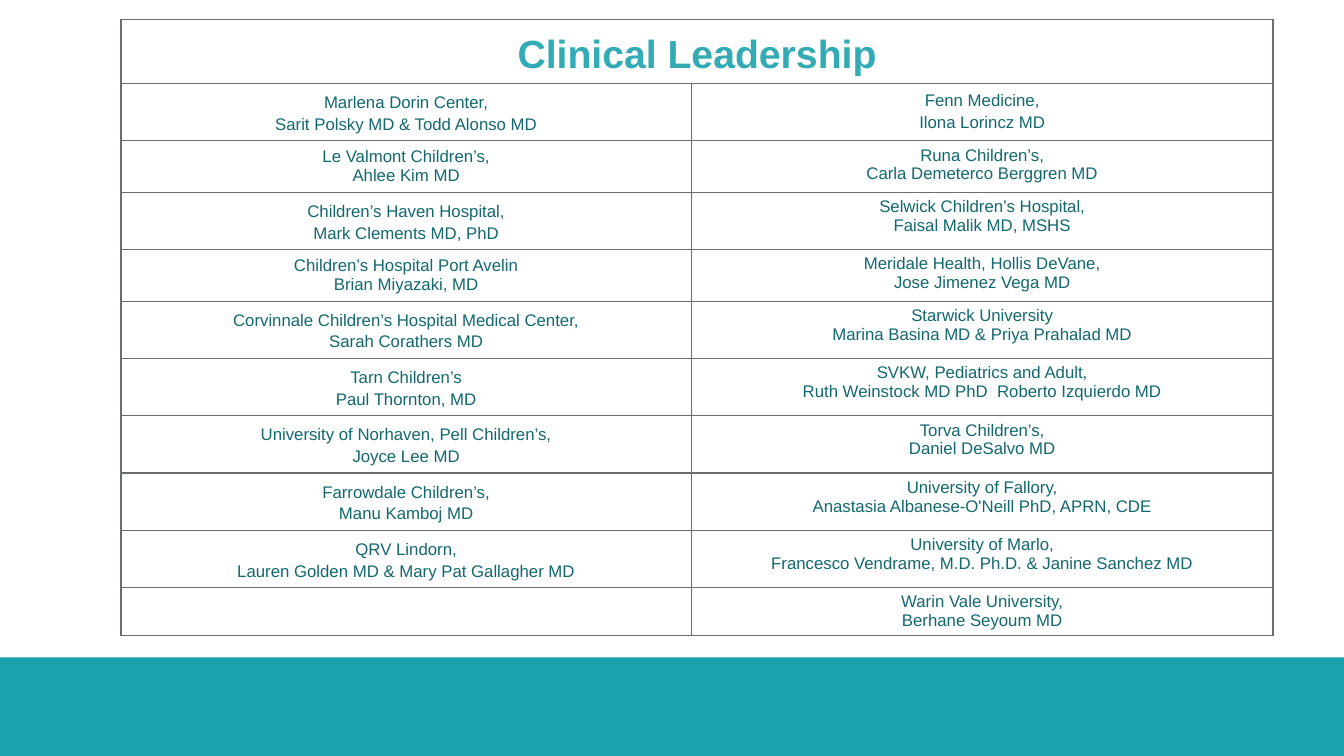
from pptx import Presentation
from pptx.dml.color import RGBColor
from pptx.enum.shapes import MSO_SHAPE as Shape
from pptx.enum.text import MSO_ANCHOR as Anchor, PP_ALIGN as Align
from pptx.oxml import parse_xml
from pptx.oxml.ns import nsdecls
from pptx.util import Pt

WHITE = RGBColor(0xFF, 0xFF, 0xFF)
BAND = RGBColor(0x1B, 0xA2, 0xAC)
HEADING = RGBColor(0x32, 0xAB, 0xB4)
BODY = RGBColor(0x13, 0x68, 0x6F)
BORDER = RGBColor(0x69, 0x6F, 0x70)

HEADING_FONT = {"name": "Arial", "size": Pt(28), "bold": True}
BODY_FONT = {"name": "Arial", "size": Pt(12), "bold": False}
MIDDLE = {"vertical_anchor": Anchor.MIDDLE, "margin_left": Pt(5), "margin_right": Pt(5),
          "margin_top": Pt(5), "margin_bottom": Pt(5)}
TOP = {"vertical_anchor": Anchor.TOP}

LEFT_SITES = [
    ("Marlena Dorin Center,", "Sarit Polsky MD & Todd Alonso MD"),
    ("Le Valmont Children’s,", "Ahlee Kim MD"),
    ("Children’s Haven Hospital,", "Mark Clements MD, PhD"),
    ("Children’s Hospital Port Avelin", "Brian Miyazaki, MD"),
    ("Corvinnale Children’s Hospital Medical Center,", "Sarah Corathers MD"),
    ("Tarn Children’s", "Paul Thornton, MD"),
    ("University of Norhaven, Pell Children’s,", "Joyce Lee MD"),
    ("Farrowdale Children’s,", "Manu Kamboj MD"),
    ("QRV Lindorn,", "Lauren Golden MD & Mary Pat Gallagher MD"),
    (),
]
RIGHT_SITES = [
    ("Fenn Medicine,", "Ilona Lorincz MD"),
    ("Runa Children’s,", "Carla Demeterco Berggren MD"),
    ("Selwick Children’s Hospital,", "Faisal Malik MD, MSHS"),
    ("Meridale Health, Hollis DeVane,", "Jose Jimenez Vega MD"),
    ("Starwick University", "Marina Basina MD & Priya Prahalad MD"),
    ("SVKW, Pediatrics and Adult,", "Ruth Weinstock MD PhD  Roberto Izquierdo MD"),
    ("Torva Children’s,", "Daniel DeSalvo MD"),
    ("University of Fallory,", "Anastasia Albanese-O'Neill PhD, APRN, CDE"),
    ("University of Marlo,", "Francesco Vendrame, M.D. Ph.D. & Janine Sanchez MD"),
    ("Warin Vale University,", "Berhane Seyoum MD"),
]
LOOSE, SINGLE = 1.15, 1.0
TIGHT_LEFT_ROWS = (2, 4)
ROW_HEIGHTS = [42, 38, 36, 38, 36, 38, 38, 38, 38, 38, 33]


def fill_cell(cell, lines, font, color, spacing, layout):
    for name, value in layout.items():
        setattr(cell, name, value)
    frame = cell.text_frame
    for index, line in enumerate(lines):
        para = frame.paragraphs[0] if index == 0 else frame.add_paragraph()
        para.alignment = Align.CENTER
        para.line_spacing = spacing
        span = para.add_run()
        span.text = line
        for name, value in font.items():
            setattr(span.font, name, value)
        span.font.color.rgb = color


def outline_cell(cell):
    properties = cell._tc.get_or_add_tcPr()
    for side in ("lnL", "lnR", "lnT", "lnB"):
        properties.append(parse_xml(
            f'<a:{side} {nsdecls("a")} w="{Pt(1)}"><a:solidFill>'
            f'<a:srgbClr val="{BORDER}"/></a:solidFill></a:{side}>'))
    cell.fill.solid()
    cell.fill.fore_color.rgb = WHITE


deck = Presentation()
deck.slide_width, deck.slide_height = Pt(960), Pt(540)
slide = deck.slides.add_slide(deck.slide_layouts[6])

band = slide.shapes.add_shape(Shape.RECTANGLE, Pt(0), Pt(469.5), Pt(960), Pt(70.5))
band.shadow.inherit = False
band.fill.solid()
band.fill.fore_color.rgb = BAND
band.line.fill.background()

table = slide.shapes.add_table(len(ROW_HEIGHTS), 2, Pt(86.4), Pt(13.7),
                               Pt(823), Pt(sum(ROW_HEIGHTS))).table
table.first_row = False
table.horz_banding = False
for column, width in zip(table.columns, (407.5, 415.5)):
    column.width = Pt(width)
for row, height in zip(table.rows, ROW_HEIGHTS):
    row.height = Pt(height)
for cell in table.iter_cells():
    outline_cell(cell)

table.cell(0, 0).merge(table.cell(0, 1))
fill_cell(table.cell(0, 0), ["Clinical Leadership"], HEADING_FONT, HEADING, LOOSE, MIDDLE)

for number, (left, right) in enumerate(zip(LEFT_SITES, RIGHT_SITES), start=1):
    left_spacing = SINGLE if number in TIGHT_LEFT_ROWS else LOOSE
    right_spacing = LOOSE if number == 1 else SINGLE
    fill_cell(table.cell(number, 0), left, BODY_FONT, BODY, left_spacing, MIDDLE)
    fill_cell(table.cell(number, 1), right, BODY_FONT, BODY, right_spacing, TOP)

deck.save("out.pptx")
